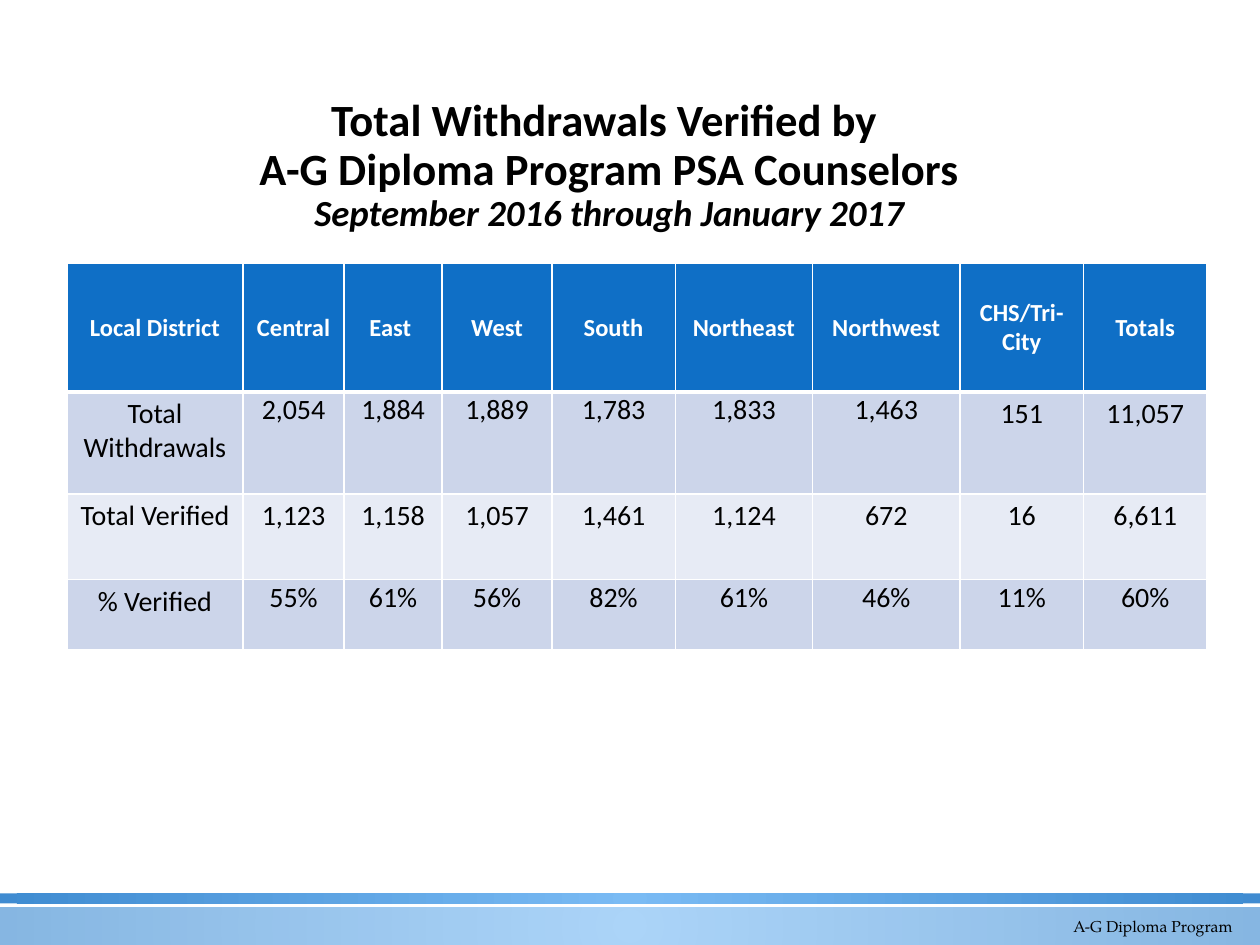
import dataclasses

import lxml.etree
import pptx
import pptx.dml.color
import pptx.enum.shapes
import pptx.enum.text
import pptx.oxml.ns
import pptx.util

Inches = pptx.util.Inches
Pt = pptx.util.Pt
qn = pptx.oxml.ns.qn
Anchor = pptx.enum.text.MSO_ANCHOR
Align = pptx.enum.text.PP_ALIGN


@dataclasses.dataclass(frozen=True)
class Theme:
    font: str = "Calibri"
    footer_font: str = "TeX Gyre Pagella"
    ink: str = "000000"
    white: str = "FFFFFF"
    blue: str = "0F6FC6"
    light_blue: str = "59AAF2"
    odd_row: str = "CCD5EA"
    even_row: str = "E7EBF5"
    title_size: float = 25.5
    subtitle_size: float = 21
    header_size: float = 14
    body_size: float = 16
    footer_size: float = 9


THEME = Theme()

TITLE_LINES = [
    ("Total Withdrawals Verified by ", THEME.title_size, False),
    ("A-G Diploma Program PSA Counselors", THEME.title_size, False),
    ("September 2016 through January 2017", THEME.subtitle_size, True),
]

ROWS = [
    ["Local District", "Central", "East ", "West", "South", "Northeast",
     "Northwest", "CHS/Tri-City", "Totals"],
    ["Total Withdrawals", "2,054", "1,884", "1,889", "1,783", "1,833",
     "1,463", "151", "11,057"],
    ["Total Verified", "1,123", "1,158", "1,057", "1,461", "1,124",
     "672", "16", "6,611"],
    ["% Verified", "55%", "61%", "56%", "82%", "61%", "46%", "11%", "60%"],
]
COLUMN_WIDTHS = [1.4, 0.8, 0.78, 0.87, 0.98, 1.09, 1.17, 0.98, 0.98]
ROW_HEIGHTS = [1.02, 0.81, 0.68, 0.56]
ROW_FILLS = [THEME.blue, THEME.odd_row, THEME.even_row, THEME.odd_row]
TIGHT_COLUMNS = {1: range(1, 7), 3: range(1, 9)}
NORMAL_MARGINS = (0.09, 0.04, 0.09, 0.04)
TIGHT_MARGINS = (0.01, 0.01, 0.01, 0)


def rgb(color):
    return pptx.dml.color.RGBColor.from_string(color)


def add_span(para, text, size, color=THEME.ink, font=THEME.font, bold=False, italic=False):
    span = para.add_run()
    span.text = text
    span.font.size = Pt(size)
    span.font.name = font
    span.font.color.rgb = rgb(color)
    span.font.bold = bold
    span.font.italic = italic


def add_box(page, left, top, width, height, anchor):
    box = page.shapes.add_textbox(Inches(left), Inches(top), Inches(width), Inches(height))
    box.text_frame.word_wrap = True
    box.text_frame.vertical_anchor = anchor
    return box.text_frame.paragraphs[0]


def add_child(parent, tag, **attributes):
    return lxml.etree.SubElement(parent, qn(tag), attributes)


def add_band(page, top, height, opacity):
    band = page.shapes.add_shape(
        pptx.enum.shapes.MSO_SHAPE.RECTANGLE,
        Inches(0), Inches(top), Inches(10), Inches(height))
    band.shadow.inherit = False
    band.line.fill.background()
    gradient = lxml.etree.Element(qn("a:gradFill"), rotWithShape="1")
    stops = add_child(gradient, "a:gsLst")
    for position, color in ((0, THEME.light_blue), (100, THEME.blue)):
        stop = add_child(stops, "a:gs", pos=str(position * 1000))
        tint = add_child(stop, "a:srgbClr", val=color)
        add_child(tint, "a:alpha", val=str(opacity * 1000))
    shade = add_child(gradient, "a:path", path="circle")
    add_child(shade, "a:fillToRect", l="50000", t="50000", r="50000", b="50000")
    band.element.spPr.find(qn("a:prstGeom")).addnext(gradient)


def add_title(page):
    para = add_box(page, 0.53, 0.37, 8.61, 1.54, Anchor.BOTTOM)
    para.alignment = Align.CENTER
    para.line_spacing = 0.9
    for index, (text, size, italic) in enumerate(TITLE_LINES):
        if index:
            para.add_line_break()
        add_span(para, text, size, bold=True, italic=italic)


def set_borders(cell, widths):
    properties = cell._tc.get_or_add_tcPr()
    for side, width in widths.items():
        line = add_child(properties, f"a:ln{side}", w=str(Pt(width)))
        fill = add_child(line, "a:solidFill")
        add_child(fill, "a:srgbClr", val=THEME.white)


def fill_cell(cell, text, row, column):
    is_header = row == 0
    set_borders(cell, {"L": 1, "R": 1, "T": 3 if row == 1 else 1, "B": 3 if is_header else 1})
    cell.fill.solid()
    cell.fill.fore_color.rgb = rgb(ROW_FILLS[row])
    cell.vertical_anchor = Anchor.MIDDLE if is_header else Anchor.TOP
    margins = TIGHT_MARGINS if column in TIGHT_COLUMNS.get(row, ()) else NORMAL_MARGINS
    cell.margin_left, cell.margin_top, cell.margin_right, cell.margin_bottom = map(Inches, margins)
    para = cell.text_frame.paragraphs[0]
    para.alignment = Align.CENTER
    if is_header:
        add_span(para, text, THEME.header_size, THEME.white, bold=True)
    else:
        add_span(para, text, THEME.body_size)


def add_district_table(page):
    table = page.shapes.add_table(
        len(ROWS), len(COLUMN_WIDTHS), Inches(0.53), Inches(2.09),
        Inches(sum(COLUMN_WIDTHS)), Inches(sum(ROW_HEIGHTS))).table
    for column, width in zip(table.columns, COLUMN_WIDTHS):
        column.width = Inches(width)
    for row, height in zip(table.rows, ROW_HEIGHTS):
        row.height = Inches(height)
    for row, texts in enumerate(ROWS):
        for column, text in enumerate(texts):
            fill_cell(table.cell(row, column), text, row, column)


def add_footer(page):
    para = add_box(page, 8.42, 7.2, 1.47, 0.3, Anchor.MIDDLE)
    add_span(para, "A-G Diploma Program", THEME.footer_size, font=THEME.footer_font)


def main():
    deck = pptx.Presentation()
    deck.slide_width = Inches(10)
    deck.slide_height = Inches(7.5)
    page = deck.slides.add_slide(deck.slide_layouts[6])
    add_band(page, 7.2, 0.3, 50)
    add_band(page, 7.09, 0.08, 80)
    add_title(page)
    add_district_table(page)
    add_footer(page)
    deck.save("out.pptx")


if __name__ == "__main__":
    main()
